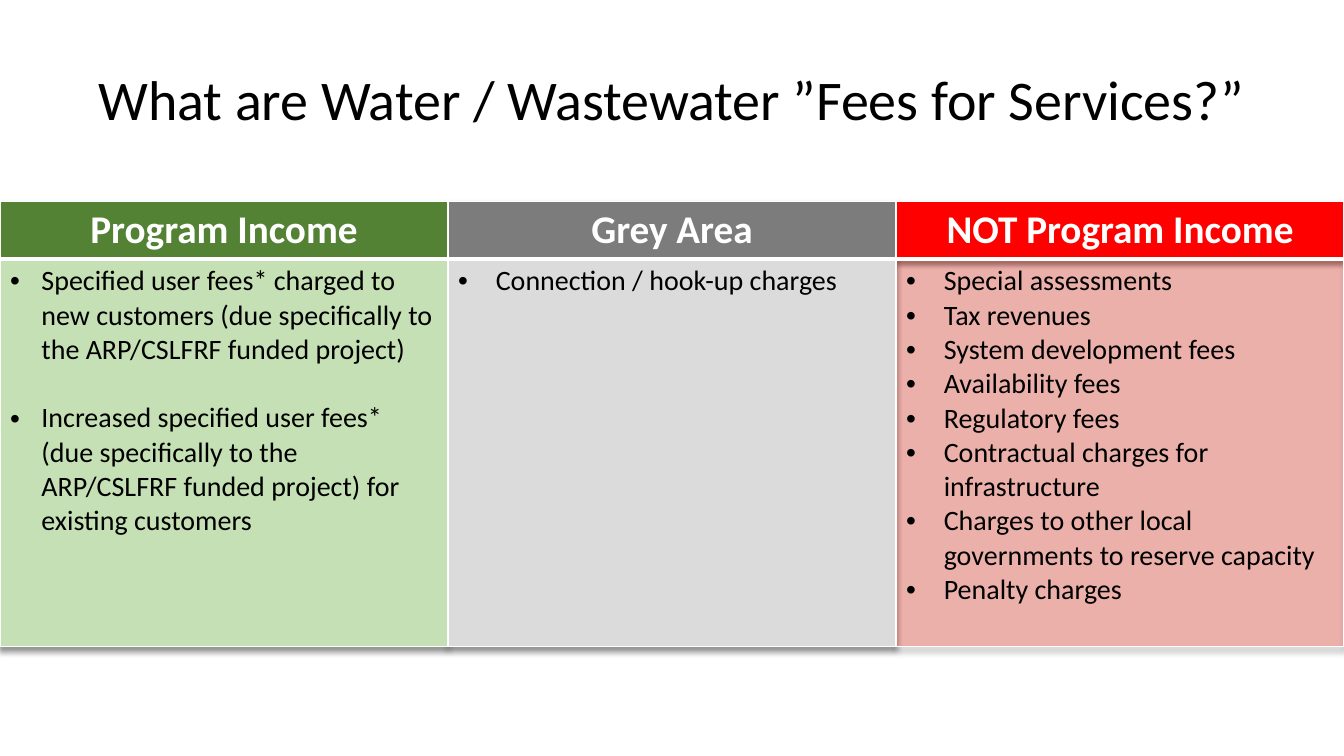
"""Build the slide on which water and wastewater fees count as program income."""
from lxml import etree
from pptx import Presentation
from pptx.dml.color import RGBColor
from pptx.enum.text import MSO_ANCHOR, PP_ALIGN
from pptx.oxml.ns import qn
from pptx.util import Cm, Pt

CENTER = PP_ALIGN.CENTER
MIDDLE = MSO_ANCHOR.MIDDLE
FONT = "Calibri"
BLACK = RGBColor(0x00, 0x00, 0x00)
WHITE = RGBColor(0xFF, 0xFF, 0xFF)
GREEN = RGBColor(0x54, 0x82, 0x35)
LIGHT_GREEN = RGBColor(0xC5, 0xE0, 0xB4)
GREY = RGBColor(0x7C, 0x7C, 0x7C)
LIGHT_GREY = RGBColor(0xDB, 0xDB, 0xDB)
RED = RGBColor(0xFF, 0x00, 0x00)
ORANGE_RED = RGBColor(0xFF, 0x1A, 0x00)

SLIDE_WIDTH = Cm(33.87)
SLIDE_HEIGHT = Cm(19.05)
HEADING_HEIGHT = Cm(1.45)
BODY_HEIGHT = Cm(9.77)

# heading, heading fill, body fill, body opacity in percent, indent, gap, fees
CATEGORIES = [
    ("Program Income", GREEN, LIGHT_GREEN, 100, Cm(0.79), Pt(24.4), [
        "Specified user fees* charged to new customers "
        "(due specifically to the ARP/CSLFRF funded project)",
        "Increased specified user fees* (due specifically to the "
        "ARP/CSLFRF funded project) for existing customers",
    ]),
    ("Grey Area", GREY, LIGHT_GREY, 100, Cm(0.95), Pt(0), [
        "Connection / hook-up charges",
    ]),
    ("NOT Program Income", RED, ORANGE_RED, 26, Cm(0.95), Pt(0), [
        "Special assessments",
        "Tax revenues",
        "System development fees",
        "Availability fees",
        "Regulatory fees",
        "Contractual charges for infrastructure",
        "Charges to other local governments to reserve capacity",
        "Penalty charges",
    ]),
]


def add_run(paragraph, text, size, color, bold=False):
    """Append one formatted run to a paragraph."""
    run = paragraph.add_run()
    run.text = text
    run.font.name = FONT
    run.font.size = Pt(size)
    run.font.bold = bold
    run.font.color.rgb = color


def add_title(slide, text):
    """Add the centred slide title."""
    frame = slide.shapes.add_textbox(Cm(1.5), Cm(0.74), Cm(30.84), Cm(3.68)).text_frame
    frame.word_wrap = True
    frame.vertical_anchor = MIDDLE
    paragraph = frame.paragraphs[0]
    paragraph.alignment = CENTER
    paragraph.line_spacing = 0.9
    add_run(paragraph, text, 40, BLACK)


def set_bullet(paragraph, indent):
    """Give a paragraph a round bullet with a hanging indent."""
    properties = paragraph._p.get_or_add_pPr()
    properties.set("marL", str(indent))
    properties.set("indent", str(-indent))
    etree.SubElement(properties, qn("a:buFont"), typeface="Arial")
    etree.SubElement(properties, qn("a:buChar"), char="•")


def add_solid_color(parent, color, opacity):
    """Append a solid fill of the given opacity in percent."""
    fill = etree.SubElement(parent, qn("a:solidFill"))
    shade = etree.SubElement(fill, qn("a:srgbClr"), val=str(color))
    if opacity < 100:
        etree.SubElement(shade, qn("a:alpha"), val=str(opacity * 1000))


def style_cell(cell, color, opacity=100, top_width=1, bottom_width=1):
    """Set the white borders and the fill of a table cell."""
    properties = cell._tc.get_or_add_tcPr()
    for side, width in (("L", 1), ("R", 1), ("T", top_width), ("B", bottom_width)):
        border = etree.SubElement(properties, qn(f"a:ln{side}"), w=str(Pt(width)))
        add_solid_color(border, WHITE, 100)
    add_solid_color(properties, color, opacity)


def fill_heading(cell, heading, color):
    """Write a category heading."""
    paragraph = cell.text_frame.paragraphs[0]
    paragraph.alignment = CENTER
    add_run(paragraph, heading, 28, WHITE, bold=True)
    style_cell(cell, color, bottom_width=3)


def fill_body(cell, fees, color, opacity, indent, gap):
    """Write the bulleted fees of a category."""
    frame = cell.text_frame
    for index, fee in enumerate(fees):
        paragraph = frame.add_paragraph() if index else frame.paragraphs[0]
        paragraph.space_before = gap if index else Pt(0)
        set_bullet(paragraph, indent)
        add_run(paragraph, fee, 20, BLACK)
    style_cell(cell, color, opacity, top_width=3)


def add_table_shadow(table):
    """Cast a soft shadow below the table."""
    effects = etree.Element(qn("a:effectLst"))
    shadow = etree.SubElement(effects, qn("a:outerShdw"), blurRad=str(Pt(4)),
                              dist=str(Pt(3)), dir="5400000", algn="t", rotWithShape="0")
    shade = etree.SubElement(shadow, qn("a:srgbClr"), val=str(BLACK))
    etree.SubElement(shade, qn("a:alpha"), val="40000")
    table._tbl.tblPr.insert(0, effects)


def add_fee_table(slide):
    """Add the table with one column for each fee category."""
    table = slide.shapes.add_table(2, len(CATEGORIES), Cm(0), Cm(5.08), SLIDE_WIDTH,
                                   HEADING_HEIGHT + BODY_HEIGHT).table
    table.horz_banding = False
    table.rows[0].height = HEADING_HEIGHT
    table.rows[1].height = BODY_HEIGHT
    for column, category in enumerate(CATEGORIES):
        heading, heading_color, body_color, opacity, indent, gap, fees = category
        fill_heading(table.cell(0, column), heading, heading_color)
        fill_body(table.cell(1, column), fees, body_color, opacity, indent, gap)
    add_table_shadow(table)


def main():
    """Create and save the presentation."""
    presentation = Presentation()
    presentation.slide_width = SLIDE_WIDTH
    presentation.slide_height = SLIDE_HEIGHT
    slide = presentation.slides.add_slide(presentation.slide_layouts[6])
    add_title(slide, "What are Water / Wastewater ”Fees for Services?”")
    add_fee_table(slide)
    presentation.save("out.pptx")


if __name__ == "__main__":
    main()
